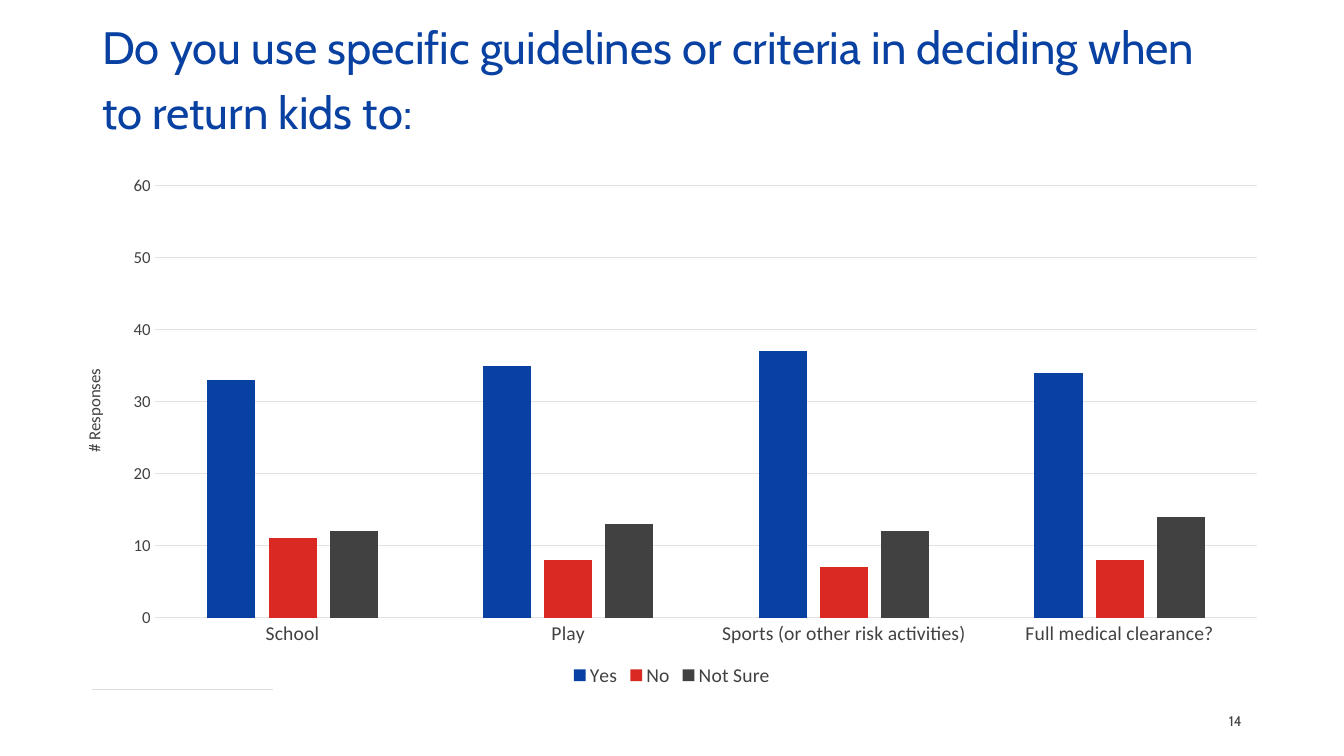
from lxml import etree
from pptx import Presentation
from pptx.chart.data import CategoryChartData as ChartData
from pptx.dml.color import RGBColor as RGB
from pptx.enum.chart import XL_CHART_TYPE as Kind
from pptx.enum.chart import XL_LEGEND_POSITION as Spot
from pptx.enum.chart import XL_TICK_MARK as Tick
from pptx.enum.shapes import MSO_CONNECTOR as Link
from pptx.enum.text import MSO_ANCHOR as Anchor
from pptx.enum.text import PP_ALIGN as Align
from pptx.oxml.ns import qn
from pptx.util import Pt

BLUE = RGB(0x08, 0x41, 0xA2)
RED = RGB(0xDA, 0x28, 0x23)
DARK = RGB(0x41, 0x41, 0x42)
PALE = RGB(0xE2, 0xE2, 0xE3)

CATS = ["School", "Play", "Sports (or other risk activities)",
        "Full medical clearance?"]
SERIES = [
    ("Yes", (33, 35, 37, 34), BLUE),
    ("No", (11, 8, 7, 8), RED),
    ("Not Sure", (12, 13, 12, 14), DARK),
]


def style(font, size, color=DARK, face="Calibri"):
    font.name, font.size, font.bold = face, Pt(size), False
    font.color.rgb = color


def put_text(slide, box, text, size, color=DARK, align=Align.LEFT, space=1):
    frame = slide.shapes.add_textbox(*map(Pt, box)).text_frame
    frame.word_wrap = True
    frame.vertical_anchor = Anchor.MIDDLE
    par = frame.paragraphs[0]
    par.alignment, par.line_spacing = align, space
    run = par.add_run()
    run.text = text
    style(run.font, size, color, "Cabin")


def add_node(parent, tag, **attrs):
    return etree.SubElement(parent, qn(tag), attrs)


def set_plot(chart, x, y, w, h):
    """Fix the inner plot area as fractions of the chart."""
    area = chart.plots[0]._element.getparent()
    for old in area.findall(qn("c:layout")):
        area.remove(old)
    layout = etree.Element(qn("c:layout"))
    area.insert(0, layout)
    manual = add_node(layout, "c:manualLayout")
    add_node(manual, "c:layoutTarget", val="inner")
    add_node(manual, "c:xMode", val="edge")
    add_node(manual, "c:yMode", val="edge")
    for key, val in zip("xywh", (x, y, w, h)):
        add_node(manual, f"c:{key}", val=str(val))


def draw_chart(slide, box):
    data = ChartData()
    data.categories = CATS
    for name, vals, _ in SERIES:
        data.add_series(name, vals)
    chart = slide.shapes.add_chart(
        Kind.COLUMN_CLUSTERED, *map(Pt, box), data).chart
    chart.has_title = False
    style(chart.font, 12)

    # Columns
    plot = chart.plots[0]
    plot.vary_by_categories = False
    plot.gap_width, plot.overlap = 219, -27
    for bars, (_, _, color) in zip(plot.series, SERIES):
        bars.format.fill.solid()
        bars.format.fill.fore_color.rgb = color
    set_plot(chart, 0.07, 0.046, 0.917, 0.815)

    # Axes
    cat, val = chart.category_axis, chart.value_axis
    for axis, size in ((cat, 14), (val, 12)):
        axis.major_tick_mark = axis.minor_tick_mark = Tick.NONE
        style(axis.tick_labels.font, size)
    val.minimum_scale, val.maximum_scale, val.major_unit = 0, 60, 10
    val.has_major_gridlines = True
    val.format.line.fill.background()
    for line in (cat.format.line, val.major_gridlines.format.line):
        line.color.rgb, line.width = PALE, Pt(0.75)
    par = val.axis_title.text_frame.paragraphs[0]
    run = par.add_run()
    run.text = "# Responses"
    style(run.font, 12)

    # Legend
    chart.has_legend = True
    chart.legend.position = Spot.BOTTOM
    chart.legend.include_in_layout = False
    style(chart.legend.font, 14)


def draw_foot(slide, box):
    x, y, w, h = box
    rule = slide.shapes.add_connector(
        Link.STRAIGHT, Pt(x), Pt(y), Pt(x + 129), Pt(y))
    rule.line.color.rgb, rule.line.width = DARK, Pt(0.25)
    props = rule._element.spPr
    add_node(props.find(".//" + qn("a:srgbClr")), "a:alpha", val="50000")
    add_node(props, "a:effectLst")
    put_text(slide, (x + w - 216, y + 8, 216, h - 8), "14", 10,
             align=Align.RIGHT)


def main():
    deck = Presentation()
    deck.slide_width, deck.slide_height = Pt(960), Pt(540)
    slide = deck.slides.add_slide(deck.slide_layouts[6])
    draw_foot(slide, (66, 492.5, 828, 36.5))
    put_text(slide, (66, 0, 828, 104.4),
             "Do you use specific guidelines or criteria in deciding when "
             "to return kids to:", 32.4, BLUE, space=1.2)
    draw_chart(slide, (50.4, 115.2, 859, 378.7))
    deck.save("out.pptx")


if __name__ == "__main__":
    main()
